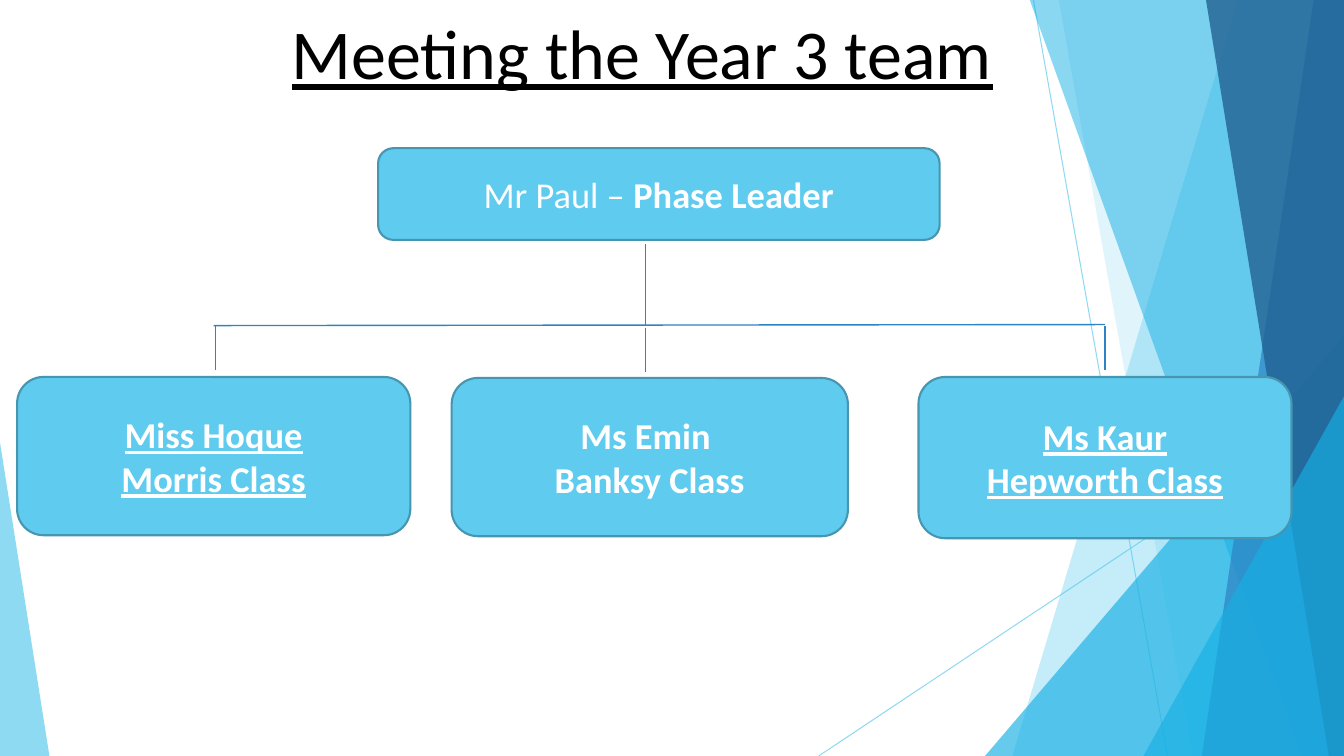
from dataclasses import dataclass

from lxml.etree import SubElement
from pptx import Presentation
from pptx.dml.color import RGBColor
from pptx.enum.shapes import MSO_CONNECTOR, MSO_SHAPE
from pptx.enum.text import MSO_ANCHOR, PP_ALIGN
from pptx.oxml.ns import qn
from pptx.util import Pt


@dataclass(frozen=True)
class Theme:
    font: str = "Calibri"
    title_size: int = 50
    box_size: int = 26
    black: str = "000000"
    white: str = "FFFFFF"
    sky: str = "5FCBEF"
    cyan: str = "17B0E4"
    blue: str = "2E83C3"
    navy: str = "226292"
    outline: str = "4696B1"


theme = Theme()
PX = 9144
WIDTH, HEIGHT = 1333, 750

presentation = Presentation()
presentation.slide_width = WIDTH * PX
presentation.slide_height = HEIGHT * PX
slide = presentation.slides.add_slide(presentation.slide_layouts[6])
shapes = slide.shapes


def set_opacity(element, percent):
    for color in element.iter(qn("a:srgbClr")):
        SubElement(color, qn("a:alpha"), val=str(percent * 1000))


def add_line(start_x, start_y, end_x, end_y, color, width, opacity=100):
    connector = shapes.add_connector(
        MSO_CONNECTOR.STRAIGHT, start_x * PX, start_y * PX, end_x * PX, end_y * PX
    )
    connector.line.color.rgb = RGBColor.from_string(color)
    connector.line.width = Pt(width)
    properties = connector._element.spPr
    if opacity < 100:
        set_opacity(properties, opacity)
    SubElement(properties, qn("a:effectLst"))


add_line(1025, 0, 1158, HEIGHT, theme.sky, 0.75, 70)
add_line(WIDTH, 403, 812, HEIGHT, theme.sky, 0.75, 70)

facets = [
    ("band", 1228, 1004, theme.sky, 36),
    ("band", 1050, 1183, theme.sky, 20),
    ("triangle", (977, 333, 356, 417), 1, theme.cyan, 66),
    ("band", 1021, 1291, theme.cyan, 50),
    ("band", 1303, 1192, theme.blue, 70),
    ("band", 1196, 1318, theme.navy, 80),
    ("triangle", (1134, 393, 199, 357), 1, theme.cyan, 66),
    ("triangle", (0, 439, 49, 311), 0, theme.sky, 70),
]
for kind, place, detail, color, opacity in facets:
    if kind == "band":
        builder = shapes.build_freeform(place, -1, scale=PX)
        builder.add_line_segments([(WIDTH, -1), (WIDTH, HEIGHT), (detail, HEIGHT)])
        facet = builder.convert_to_shape()
    else:
        facet = shapes.add_shape(
            MSO_SHAPE.ISOSCELES_TRIANGLE, *(length * PX for length in place)
        )
        facet.adjustments[0] = detail
    facet.shadow.inherit = False
    facet.fill.solid()
    facet.fill.fore_color.rgb = RGBColor.from_string(color)
    set_opacity(facet._element.spPr, opacity)
    facet.line.fill.background()

title = shapes.add_textbox(167 * PX, 5 * PX, 940 * PX, 144 * PX)
title.text_frame.word_wrap = True
paragraph = title.text_frame.paragraphs[0]
paragraph.text = "Meeting the Year 3 team"
paragraph.alignment = PP_ALIGN.CENTER
paragraph.font.name = theme.font
paragraph.font.size = Pt(theme.title_size)
paragraph.font.underline = True
paragraph.font.color.rgb = RGBColor.from_string(theme.black)

team = [
    ((448, 375, 393, 157), [["Ms Emin "], ["Banksy Class"]], True, False),
    ((911, 374, 370, 160), [["Ms Kaur"], ["Hepworth Class"]], True, True),
    ((17, 374, 390, 157), [["Miss Hoque"], ["Morris Class"]], True, True),
    ((375, 147, 557, 91), [["Mr Paul – ", "Phase Leader"]], False, False),
]
for place, lines, bold, underline in team:
    box = shapes.add_shape(
        MSO_SHAPE.ROUNDED_RECTANGLE, *(length * PX for length in place)
    )
    box.shadow.inherit = False
    box.fill.solid()
    box.fill.fore_color.rgb = RGBColor.from_string(theme.sky)
    box.line.color.rgb = RGBColor.from_string(theme.outline)
    box.line.width = Pt(1.5)
    frame = box.text_frame
    frame.word_wrap = True
    frame.vertical_anchor = MSO_ANCHOR.MIDDLE
    for index, texts in enumerate(lines):
        paragraph = frame.add_paragraph() if index else frame.paragraphs[0]
        paragraph.alignment = PP_ALIGN.CENTER
        paragraph.font.name = theme.font
        paragraph.font.size = Pt(theme.box_size)
        paragraph.font.bold = bold
        paragraph.font.underline = underline
        paragraph.font.color.rgb = RGBColor.from_string(theme.white)
        for position, text in enumerate(texts):
            run = paragraph.add_run()
            run.text = text
            if position:
                run.font.bold = True

branches = [
    (212, 323, 1096, 322),
    (214, 323, 214, 367),
    (640, 325, 640, 369),
    (1096, 323, 1096, 367),
    (640, 242, 640, 322),
]
for branch in branches:
    add_line(*branch, theme.blue, 1)

presentation.save("out.pptx")
